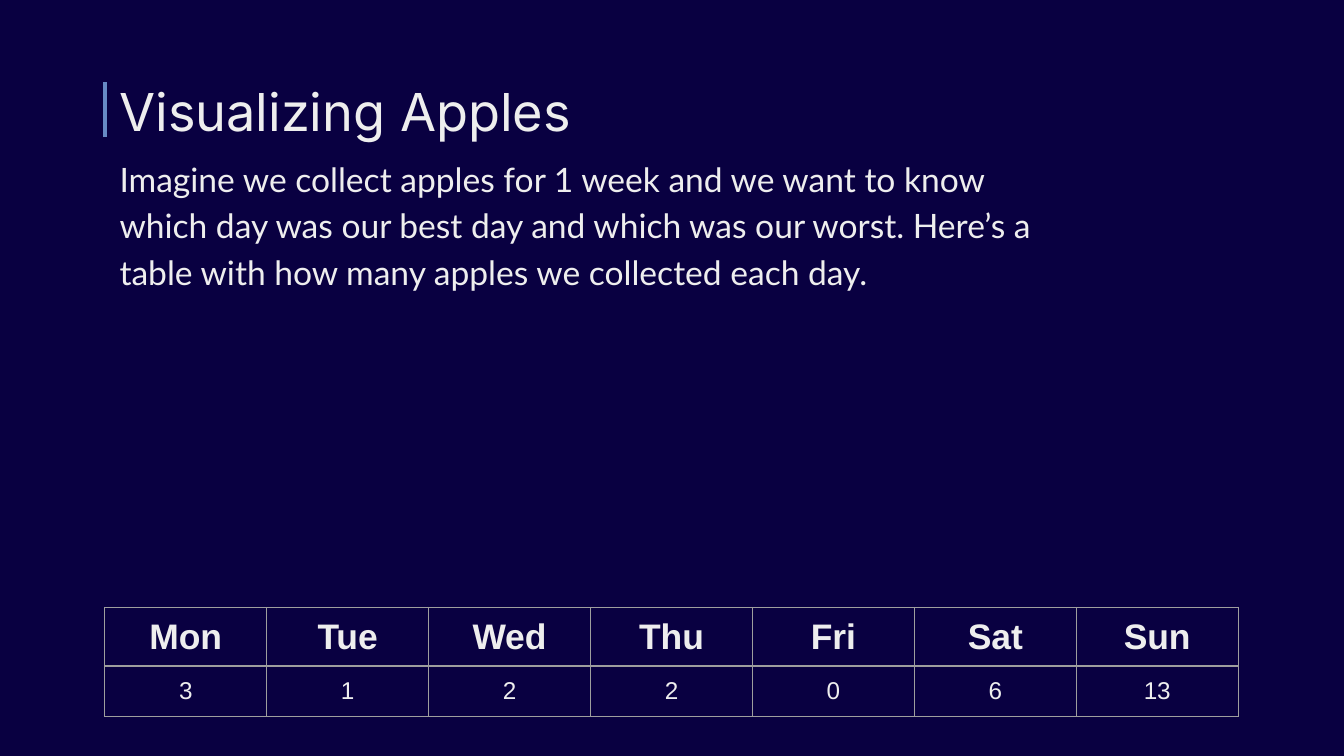
"""Build the Visualizing Apples slide with its weekly apple table."""
from lxml import etree
from pptx import Presentation
from pptx import util as u
from pptx.dml.color import RGBColor
from pptx.enum import shapes, text
from pptx.oxml.ns import qn

TITLE = "Visualizing Apples"
INTRO = (
    "Imagine we collect apples for 1 week and we want to know which day was our "
    "best day and which was our worst. Here’s a table with how many apples we "
    "collected each day."
)
APPLES = {"Mon": 3, "Tue": 1, "Wed": 2, "Thu": 2, "Fri": 0, "Sat": 6, "Sun": 13}

THEME = {
    "back": "090041", "ink": "EEEEEE", "accent": "678AC5", "grid": "9E9E9E",
    "title": 28, "body": 18, "head": 19, "value": 13,
    "title_font": "Inter", "body_font": "Lato", "table_font": "Arial",
}
LEFT, COL_W, ROW_H = 1.98, 3.06, (1.11, 0.96)


def write(tf, content, *, size, font, bold=False, align=None, spacing=None):
    p = tf.paragraphs[0]
    p.alignment = align
    p.line_spacing = spacing
    r = p.add_run()
    r.text = content
    r.font.size, r.font.name, r.font.bold = u.Pt(size), font, bold
    r.font.color.rgb = RGBColor.from_string(THEME["ink"])


def add_text(slide, box, content, **fmt):
    tf = slide.shapes.add_textbox(*map(u.Cm, box)).text_frame
    tf.word_wrap = True
    tf.margin_left = tf.margin_right = tf.margin_top = tf.margin_bottom = u.Cm(0.25)
    write(tf, content, **fmt)


def add_borders(cell):
    pr = cell._tc.get_or_add_tcPr()
    for i, side in enumerate(("lnL", "lnR", "lnT", "lnB")):
        ln = etree.Element(qn(f"a:{side}"), w=str(u.Pt(0.75)))
        fill = etree.SubElement(ln, qn("a:solidFill"))
        etree.SubElement(fill, qn("a:srgbClr"), val=THEME["grid"])
        pr.insert(i, ln)


def add_table(slide):
    rows = (list(APPLES), list(APPLES.values()))
    formats = ({"size": THEME["head"], "bold": True}, {"size": THEME["value"]})
    n = len(APPLES)
    box = (LEFT, 11.48, n * COL_W, sum(ROW_H))
    table = slide.shapes.add_table(len(rows), n, *map(u.Cm, box)).table
    table.first_row = table.horz_banding = False
    for col in table.columns:
        col.width = u.Cm(COL_W)
    for i, (values, fmt) in enumerate(zip(rows, formats)):
        table.rows[i].height = u.Cm(ROW_H[i])
        for j, value in enumerate(values):
            cell = table.cell(i, j)
            cell.fill.background()
            cell.vertical_anchor = text.MSO_ANCHOR.MIDDLE
            cell.margin_left = cell.margin_right = u.Cm(0.3)
            cell.margin_top = cell.margin_bottom = u.Cm(0.15)
            write(cell.text_frame, str(value), font=THEME["table_font"],
                  align=text.PP_ALIGN.CENTER, **fmt)
            add_borders(cell)


def main():
    prs = Presentation()
    prs.slide_width, prs.slide_height = u.Cm(25.4), u.Cm(14.29)
    slide = prs.slides.add_slide(prs.slide_layouts[6])
    slide.background.fill.solid()
    slide.background.fill.fore_color.rgb = RGBColor.from_string(THEME["back"])

    bar = slide.shapes.add_connector(
        shapes.MSO_CONNECTOR.STRAIGHT, *map(u.Cm, (LEFT, 2.59, LEFT, 1.55)))
    bar.line.width = u.Pt(2.25)
    bar.line.color.rgb = RGBColor.from_string(THEME["accent"])
    etree.SubElement(bar._element.spPr, qn("a:effectLst"))

    add_text(slide, (2.01, 1.25, 21.41, 1.6), TITLE,
             size=THEME["title"], font=THEME["title_font"])
    add_table(slide)
    add_text(slide, (2.01, 2.64, 18.21, 6.2), INTRO,
             size=THEME["body"], font=THEME["body_font"], spacing=1.15)
    prs.save("out.pptx")


if __name__ == "__main__":
    main()
